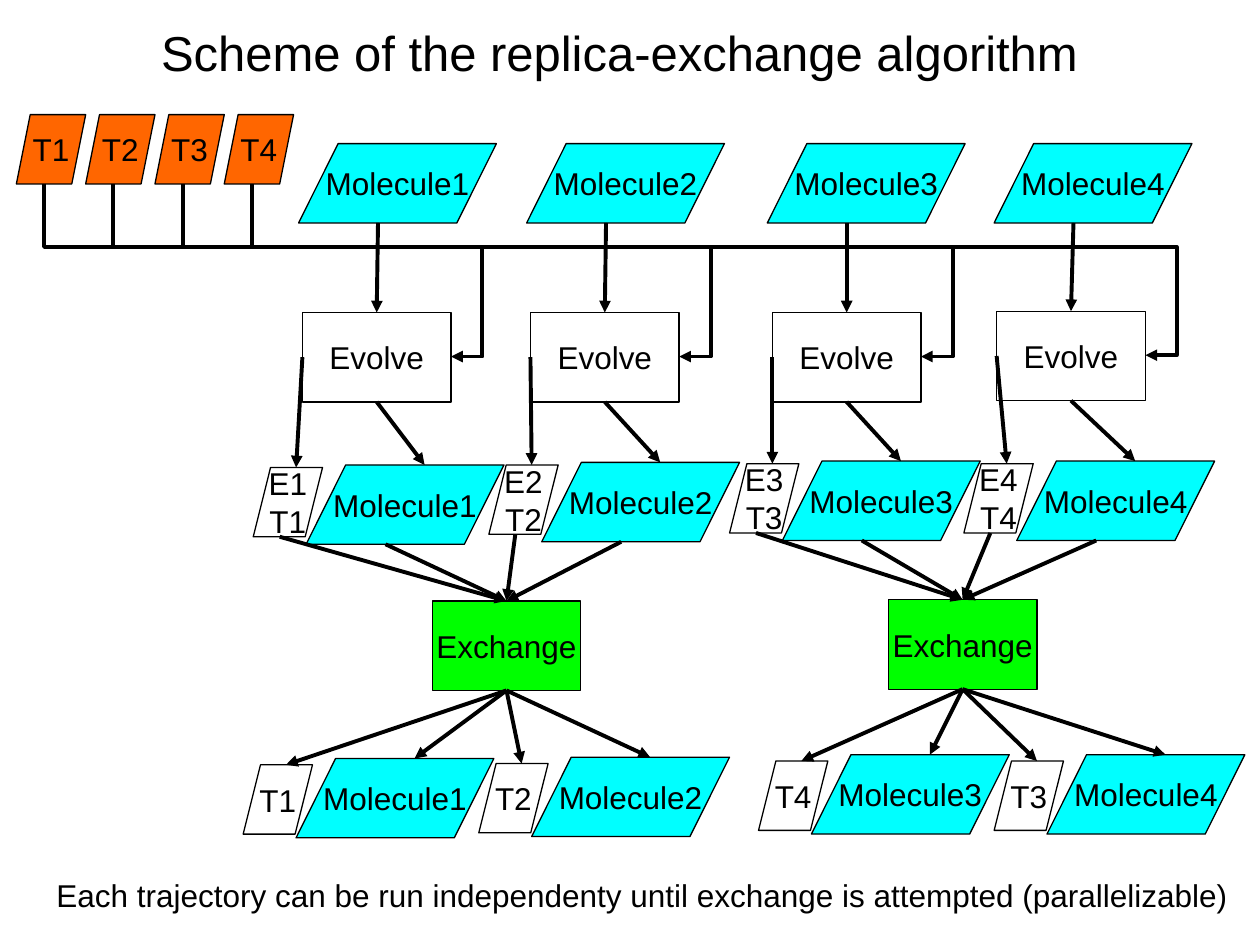
from dataclasses import dataclass
from typing import NamedTuple

from lxml.etree import SubElement
from pptx import Presentation
from pptx.dml.color import RGBColor as Rgb
from pptx.enum.shapes import MSO_CONNECTOR as Link, MSO_SHAPE as Form
from pptx.enum.text import MSO_ANCHOR as Anchor, MSO_AUTO_SIZE as Fit, PP_ALIGN as Align
from pptx.oxml.ns import qn
from pptx.util import Pt

PX = 9144
TOP, LEFT, BOTTOM = 0, 1, 2


@dataclass(frozen=True)
class Theme:
    face: str = "Arial"
    ink: Rgb = Rgb(0, 0, 0)
    white: Rgb = Rgb(255, 255, 255)
    heat: Rgb = Rgb(255, 102, 0)
    cyan: Rgb = Rgb(0, 255, 255)
    green: Rgb = Rgb(0, 255, 0)
    title: Pt = Pt(28)
    body: Pt = Pt(18)
    edge: Pt = Pt(0.75)
    arrow: Pt = Pt(2.25)


THEME = Theme()


class Kind(NamedTuple):
    form: Form
    wide: int
    high: int
    fill: Rgb
    top: float = 0.5
    foot: float = 0.5


TEMP = Kind(Form.FLOWCHART_DATA, 55, 55, THEME.heat, 0.6, 0.4)
MOL = Kind(Form.FLOWCHART_DATA, 157, 63, THEME.cyan, 0.6, 0.4)
TAG = Kind(Form.PARALLELOGRAM, 55, 55, THEME.white, 0.625, 0.375)
STEP = Kind(Form.RECTANGLE, 118, 71, THEME.white)
SWAP = Kind(Form.FLOWCHART_PROCESS, 118, 71, THEME.green)


@dataclass
class Node:
    kind: Kind
    x: int
    y: int
    text: str
    shape: object = None

    def spot(self, side: int) -> tuple[int, int]:
        kind = self.kind
        if side == LEFT:
            return self.x, self.y + kind.high // 2
        if side == TOP:
            return self.x + round(kind.wide * kind.top), self.y
        return self.x + round(kind.wide * kind.foot), self.y + kind.high

    def joins(self) -> bool:
        return self.kind in (STEP, SWAP)


def emu(*vals: float) -> list[int]:
    return [round(val * PX) for val in vals]


def write(frame, text: str, size: Pt, align: Align, wrap: bool) -> None:
    look = {"word_wrap": wrap, "auto_size": Fit.NONE, "vertical_anchor": Anchor.MIDDLE}
    for name, val in look.items():
        setattr(frame, name, val)
    frame.text = text
    for para in frame.paragraphs:
        para.alignment = align
        for name, val in {"name": THEME.face, "size": size, "bold": False}.items():
            setattr(para.font, name, val)
        para.font.color.rgb = THEME.ink


def place(slide, node: Node) -> Node:
    kind = node.kind
    shape = slide.shapes.add_shape(kind.form, *emu(node.x, node.y, kind.wide, kind.high))
    shape.shadow.inherit = False
    shape.fill.solid()
    shape.fill.fore_color.rgb = kind.fill
    shape.line.color.rgb = THEME.ink
    shape.line.width = THEME.edge
    write(shape.text_frame, node.text, THEME.body, Align.CENTER, False)
    node.shape = shape
    return node


def style(line) -> None:
    line.line.color.rgb = THEME.ink
    line.line.width = THEME.arrow
    props = line._element.spPr
    SubElement(props.find(qn("a:ln")), qn("a:tailEnd"), type="triangle")
    SubElement(props, qn("a:effectLst"))


def arrow(slide, src: Node, out: int, dest: Node) -> None:
    line = slide.shapes.add_connector(Link.STRAIGHT, *emu(*src.spot(out), *dest.spot(TOP)))
    if src.joins():
        line.begin_connect(src.shape, out)
    if dest.joins():
        line.end_connect(dest.shape, TOP)
    style(line)


def elbow(slide, src: Node, dest: Node, drop: int = 50, bulge: int = 25) -> None:
    x, y = src.spot(BOTTOM)
    end, low = dest.x + dest.kind.wide, dest.spot(LEFT)[1]
    run, fall = end - x, low - y
    mid, half = (x + end) / 2, (y + low) / 2
    line = slide.shapes.add_connector(
        Link.ELBOW, *emu(mid - fall / 2, half - run / 2, mid + fall / 2, half + run / 2)
    )
    props = line._element.spPr
    for name, val in {"rot": "16200000", "flipH": "1"}.items():
        props.find(qn("a:xfrm")).set(name, val)
    geom = props.find(qn("a:prstGeom"))
    geom.set("prst", "bentConnector4")
    bends = geom.find(qn("a:avLst"))
    for name, part in {"adj1": drop / fall, "adj2": 1 + bulge / run}.items():
        SubElement(bends, qn("a:gd"), name=name, fmla=f"val {round(part * 100000)}")
    style(line)


def main() -> None:
    deck = Presentation()
    deck.slide_width, deck.slide_height = emu(1000, 750)
    slide = deck.slides.add_slide(deck.slide_layouts[5])

    title = slide.shapes.title
    spot = dict(zip(("left", "top", "width", "height"), emu(27, 13, 929, 57)))
    for name, val in spot.items():
        setattr(title, name, val)
    write(title.text_frame, "Scheme of the replica-exchange algorithm", THEME.title, Align.CENTER, True)

    def row(kind: Kind, spots: list, names: list) -> list[Node]:
        return [place(slide, Node(kind, x, y, name)) for (x, y), name in zip(spots, names)]

    def shift(spots: list, down: int) -> list:
        return [(x - 42, y + down) for x, y in spots]

    nums = range(1, 5)
    mols = [f"Molecule{num}" for num in nums]
    mid = [(243, 369), (430, 367), (621, 366), (807, 366)]
    last = [(235, 602), (422, 601), (644, 599), (831, 599)]

    temps = row(TEMP, [(13 + 55 * col, 91) for col in range(4)], [f"T{num}" for num in nums])
    starts = row(MOL, [(x, 114) for x in (237, 418, 609, 789)], mols)
    steps = row(STEP, [(240, 248), (421, 248), (613, 248), (791, 247)], ["Evolve"] * 4)
    tags = row(TAG, shift(mid, 2), [f"E{num}\nT{num}" for num in nums])
    moved = row(MOL, mid, mols)
    swaps = row(SWAP, [(343, 477), (705, 476)], ["Exchange"] * 2)
    ends = row(TAG, shift(last, 5), ["T1", "T2", "T4", "T3"])
    final = row(MOL, last, mols)

    for col, step in enumerate(steps):
        swap = swaps[col // 2]
        arrow(slide, starts[col], BOTTOM, step)
        elbow(slide, temps[col], step)
        arrow(slide, step, LEFT, tags[col])
        arrow(slide, step, BOTTOM, moved[col])
        for node in (tags[col], moved[col]):
            arrow(slide, node, BOTTOM, swap)
        for node in (ends[col], final[col]):
            arrow(slide, swap, BOTTOM, node)

    note = slide.shapes.add_textbox(*emu(35, 690, 953, 40))
    write(
        note.text_frame,
        "Each trajectory can be run independenty until exchange is attempted (parallelizable)",
        THEME.body, Align.LEFT, True,
    )
    deck.save("out.pptx")


if __name__ == "__main__":
    main()
